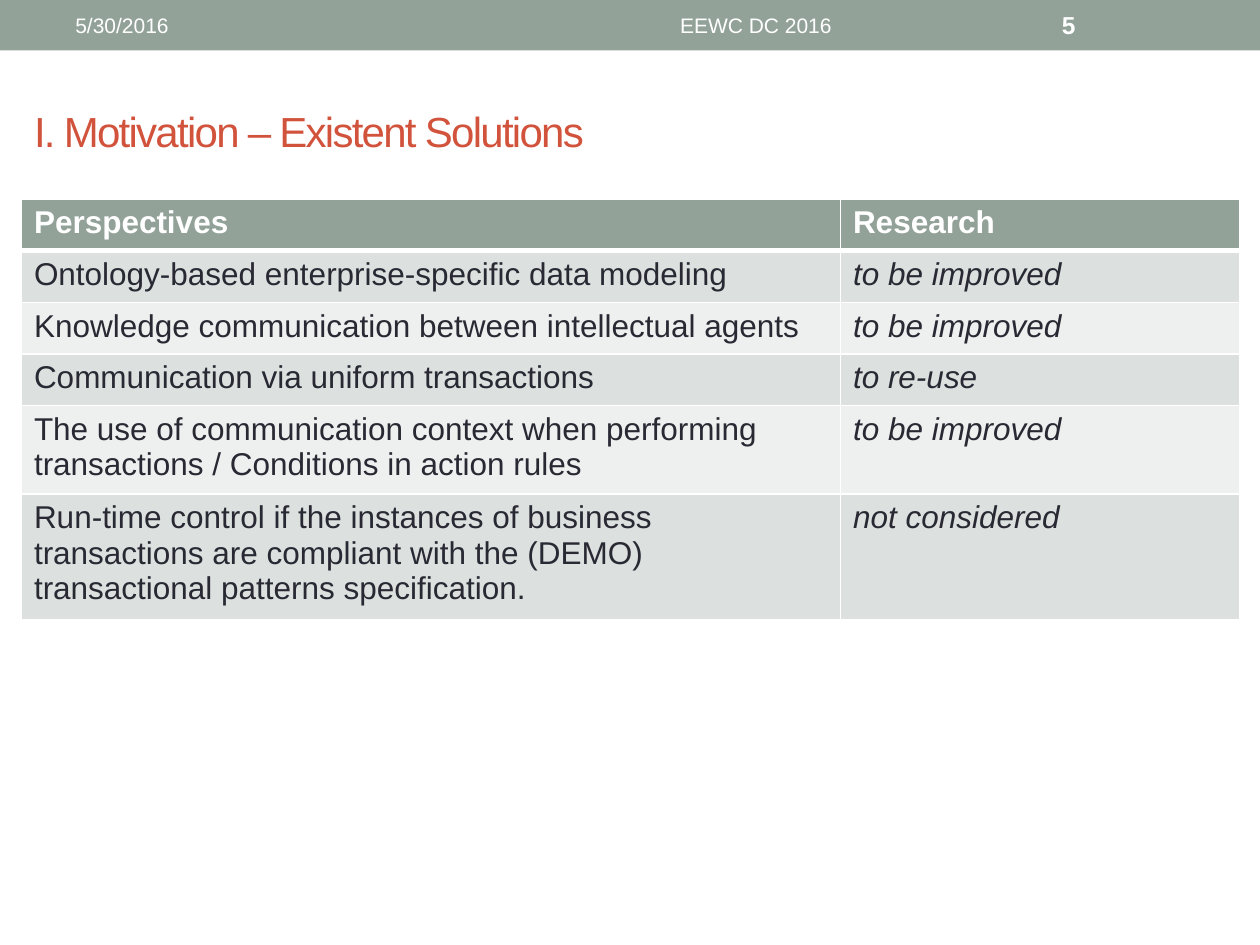
from dataclasses import dataclass

from lxml.etree import SubElement
from pptx import Presentation
from pptx.dml.color import RGBColor
from pptx.enum.shapes import MSO_SHAPE as Shape
from pptx.enum.text import MSO_ANCHOR as Anchor, MSO_AUTO_SIZE as AutoSize, PP_ALIGN as Align
from pptx.oxml.ns import qn
from pptx.util import Inches, Pt


@dataclass(frozen=True)
class Theme:
    """Colours, font and type sizes of the slide."""
    font: str = "Arial"
    sage: str = "93A299"
    red: str = "D2533C"
    ink: str = "292934"
    white: str = "FFFFFF"
    bands: tuple = ("DCE0DE", "EEF0EF")
    title_size: int = 24
    table_size: int = 18
    number_size: int = 14
    footer_size: int = 12


THEME = Theme()
HEADER = ("Perspectives", "Research")
SOLUTIONS = [
    ("Ontology-based enterprise-specific data modeling", "to be improved"),
    ("Knowledge communication between intellectual agents", "to be improved"),
    ("Communication via uniform transactions", "to re-use"),
    ("The use of communication context when performing transactions / "
     "Conditions in action rules", "to be improved"),
    ("Run-time control if the instances of business transactions are compliant "
     "with the (DEMO) transactional patterns specification.", "not considered"),
]


def place(shape, left, top, width, height):
    """Move and size a shape, in inches."""
    shape.left, shape.top = Inches(left), Inches(top)
    shape.width, shape.height = Inches(width), Inches(height)


def write(text_frame, text, size, color, bold=False, italic=False, align=Align.LEFT):
    """Set one formatted paragraph and return its run."""
    text_frame.text = text
    paragraph = text_frame.paragraphs[0]
    paragraph.alignment = align
    run = paragraph.runs[0]
    run.font.name, run.font.size = THEME.font, Pt(size)
    run.font.bold, run.font.italic = bold, italic
    run.font.color.rgb = RGBColor.from_string(color)
    return run


def add_top_band(slide, left, top, width, height):
    """Draw the coloured band with date, event name and slide number."""
    band = slide.shapes.add_shape(
        Shape.RECTANGLE, Inches(left), Inches(top), Inches(width), Inches(height))
    band.shadow.inherit = False
    band.fill.solid()
    band.fill.fore_color.rgb = RGBColor.from_string(THEME.sage)
    band.line.fill.background()
    margin = 0.02
    labels = [
        ("5/30/2016", 0.5, 3.17, THEME.footer_size, False, Align.LEFT),
        ("EEWC DC 2016", 3.75, 4.5, THEME.footer_size, False, Align.CENTER),
        ("5", 8.33, 1.17, THEME.number_size, True, Align.LEFT),
    ]
    for text, offset, label_width, size, bold, align in labels:
        label = slide.shapes.add_textbox(
            Inches(left + offset), Inches(top + margin),
            Inches(label_width), Inches(height - 2 * margin))
        label.text_frame.word_wrap = True
        label.text_frame.vertical_anchor = Anchor.MIDDLE
        write(label.text_frame, text, size, THEME.white, bold=bold, align=align)


def add_title(slide, left, top, width, height):
    """Fill and move the title placeholder."""
    title = slide.shapes.title
    place(title, left, top, width, height)
    title.text_frame.auto_size = AutoSize.NONE
    title.text_frame.vertical_anchor = Anchor.MIDDLE
    run = write(title.text_frame, "I. Motivation – Existent Solutions",
                THEME.title_size, THEME.red)
    run.font._element.set("spc", "-100")


def set_borders(cell, top, bottom):
    """Give a cell white borders, with top and bottom widths in points."""
    properties = cell._tc.get_or_add_tcPr()
    for side, width in (("L", 1), ("R", 1), ("T", top), ("B", bottom)):
        line = SubElement(properties, qn(f"a:ln{side}"), w=str(Pt(width)))
        fill = SubElement(line, qn("a:solidFill"))
        SubElement(fill, qn("a:srgbClr"), val=THEME.white)


def add_solutions_table(slide, left, top, width, row_height):
    """Build the table of perspectives and research status."""
    rows = [HEADER, *SOLUTIONS]
    table = slide.shapes.add_table(
        len(rows), len(HEADER), Inches(left), Inches(top),
        Inches(width), Inches(row_height * len(rows))).table
    first_width = 6.5
    table.columns[0].width = Inches(first_width)
    table.columns[1].width = Inches(width - first_width)
    for row_index, texts in enumerate(rows):
        table.rows[row_index].height = Inches(row_height)
        is_header = row_index == 0
        fill = THEME.sage if is_header else THEME.bands[(row_index - 1) % 2]
        color = THEME.white if is_header else THEME.ink
        for column_index, text in enumerate(texts):
            cell = table.cell(row_index, column_index)
            set_borders(cell, top=3 if row_index == 1 else 1, bottom=3 if is_header else 1)
            cell.fill.solid()
            cell.fill.fore_color.rgb = RGBColor.from_string(fill)
            write(cell.text_frame, text, THEME.table_size, color, bold=is_header,
                  italic=column_index == 1 and not is_header)


def main():
    """Build and save the presentation."""
    presentation = Presentation()
    presentation.slide_width, presentation.slide_height = Inches(10), Inches(7.5)
    slide = presentation.slides.add_slide(presentation.slide_layouts[5])
    add_top_band(slide, 0, 0, 10, 0.4)
    add_title(slide, 0.17, 0.58, 9.67, 0.92)
    add_solutions_table(slide, 0.17, 1.58, 9.67, 0.41)
    presentation.save("out.pptx")


if __name__ == "__main__":
    main()
